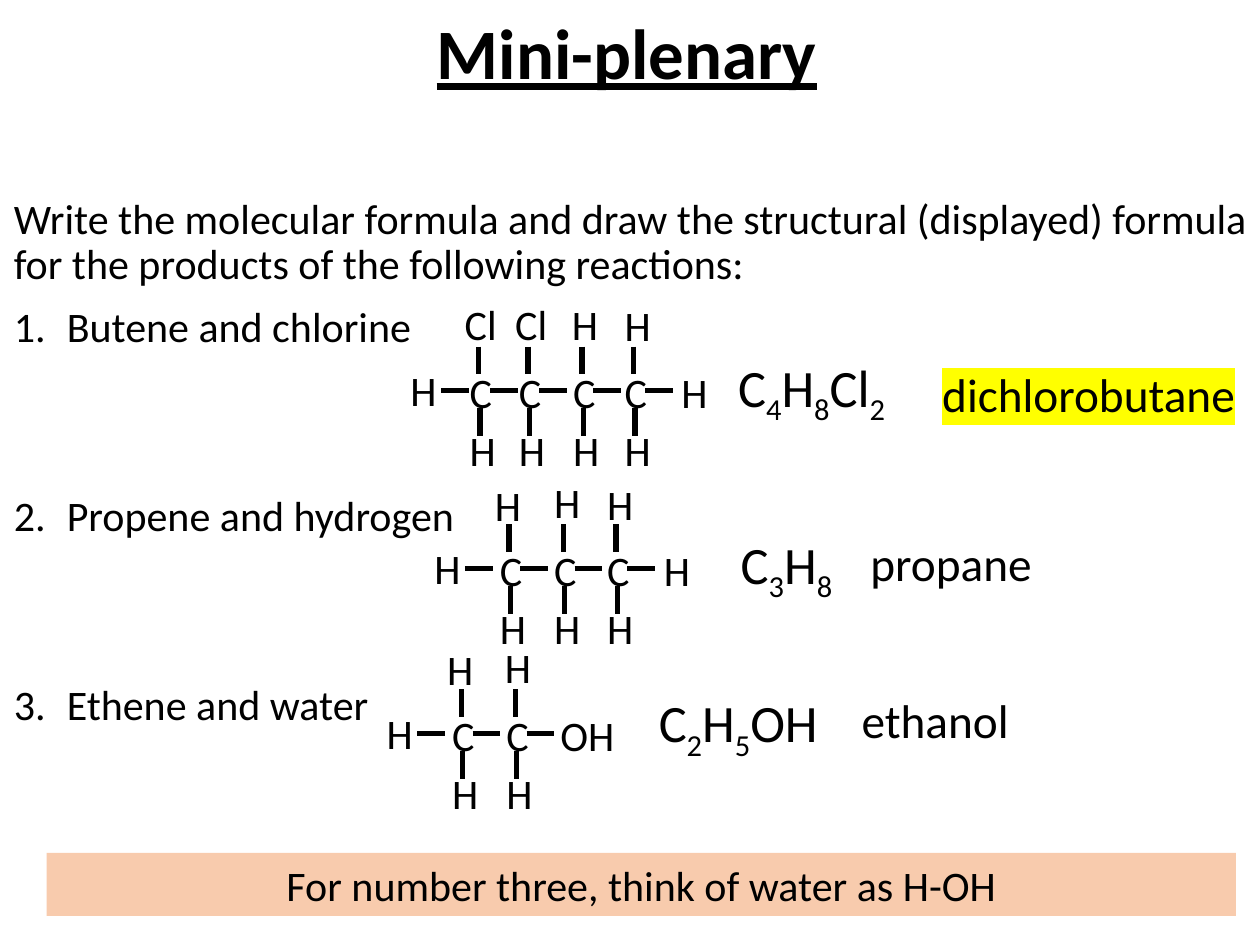
from itertools import groupby

from lxml.etree import SubElement
from pptx import Presentation
from pptx.dml.color import RGBColor
from pptx.enum.shapes import MSO_CONNECTOR as Connector, MSO_SHAPE as Shape
from pptx.enum.text import MSO_ANCHOR as Anchor, MSO_AUTO_SIZE as AutoSize, PP_ALIGN as Align
from pptx.oxml import parse_xml
from pptx.oxml.ns import nsdecls, qn
from pptx.util import Inches, Pt

BLACK = RGBColor(0x00, 0x00, 0x00)
PEACH = RGBColor(0xF8, 0xCB, 0xAD)
YELLOW = RGBColor(0xFF, 0xFF, 0x00)

COLUMNS, ROWS = 100, 75
LABEL_WIDTH, LABEL_HEIGHT = 4.7, 5
BOND = 2.2

# Each chain: row of the carbons, left end (label, column), right end (label, column),
# then one (top label, its column, carbon column, row shift of the top label) per carbon.
CHAINS = [
    (28.6, ("H", 31.6), ("H", 53.1),
     [("Cl", 35.9, 36.3, 0), ("Cl", 39.9, 40.2, 0), ("H", 44.4, 44.5, 0), ("H", 48.6, 48.6, 0.1)]),
    (42.7, ("H", 33.5), ("H", 51.7),
     [("H", 38.3, 38.7, 0.3), ("H", 43, 43, 0), ("H", 47.2, 47.2, 0.2)]),
    (55.8, ("H", 29.7), ("OH", 43.5),
     [("H", 34.5, 34.9, 0.2), ("H", 39.1, 39.2, 0)]),
]
# Molecular formula and product name, each with its column and row.
ANSWERS = [
    (("C4H8Cl2", 57.6, 27.7), ("dichlorobutane", 73.8, 28.5, YELLOW)),
    (("C3H8", 57.8, 41.7), ("propane", 68.1, 41.9, None)),
    (("C2H5OH", 51.3, 54.3), ("ethanol", 67.4, 54.4, None)),
]
TASK = ("Write the molecular formula and draw the structural (displayed) formula "
        "for the products of the following reactions:")
REACTIONS = ["Butene and chlorine", "Propene and hydrogen", "Ethene and water"]


class LessonSlide:
    font_name = "Calibri"
    text_size = 24

    def __init__(self, presentation):
        self.column = presentation.slide_width / COLUMNS
        self.row = presentation.slide_height / ROWS
        self.slide = presentation.slides.add_slide(presentation.slide_layouts[1])

    def place(self, left, top, width, height):
        """Turn grid columns and rows into lengths."""
        return (round(left * self.column), round(top * self.row),
                round(width * self.column), round(height * self.row))

    def move(self, shape, *cells):
        shape.left, shape.top, shape.width, shape.height = self.place(*cells)

    def run(self, paragraph, text, size=text_size, subscript=False, highlight=None):
        run = paragraph.add_run()
        run.text = text
        run.font.size = Pt(size)
        run.font.color.rgb = BLACK
        run.font.name = self.font_name
        properties = run._r.get_or_add_rPr()
        if subscript:
            properties.set("baseline", "-25000")
        if highlight is not None:
            properties.find(qn("a:solidFill")).addnext(parse_xml(
                f'<a:highlight {nsdecls("a")}><a:srgbClr val="{highlight}"/></a:highlight>'))
        return run

    def title(self, text):
        title = self.slide.shapes.title
        self.move(title, 0.1, 1, 99.3, 7)
        frame = title.text_frame
        frame.vertical_anchor = Anchor.MIDDLE
        frame.auto_size = AutoSize.NONE
        paragraph = frame.paragraphs[0]
        paragraph.alignment = Align.CENTER
        paragraph.line_spacing = 0.9
        run = self.run(paragraph, text, 40.5)
        run.font.bold = run.font.underline = True

    def numbered_list(self, intro, items):
        body = self.slide.placeholders[1]
        self.move(body, 0.1, 15.2, 100, 45.7)
        frame = body.text_frame
        frame.auto_size = AutoSize.NONE
        frame.vertical_anchor = Anchor.TOP
        for index, text in enumerate([intro, *items]):
            paragraph = frame.add_paragraph() if index else frame.paragraphs[0]
            paragraph.line_spacing = 0.9
            paragraph.space_before = Pt(10 if index < 2 else 82)
            properties = paragraph._p.get_or_add_pPr()
            indent = Inches(0.42) if index else 0
            properties.set("marL", str(indent))
            properties.set("indent", str(-indent))
            if index:
                SubElement(properties, qn("a:buFont"), typeface="+mj-lt")
                SubElement(properties, qn("a:buAutoNum"), type="arabicPeriod")
            else:
                SubElement(properties, qn("a:buNone"))
            self.run(paragraph, text)

    def text_box(self, shapes, *cells):
        """Add an empty box and return its paragraph."""
        frame = shapes.add_textbox(*self.place(*cells)).text_frame
        frame.word_wrap = True
        frame.auto_size = AutoSize.SHAPE_TO_FIT_TEXT
        return frame.paragraphs[0]

    def atom(self, group, symbol, left, top):
        width = LABEL_WIDTH + 1.9 * (symbol == "OH")
        self.run(self.text_box(group.shapes, left, top, width, LABEL_HEIGHT), symbol)

    def bond(self, group, left, top, across=0, down=0):
        x, y, width, height = self.place(left, top, across, down)
        line = group.shapes.add_connector(Connector.STRAIGHT, x, y, x + width, y + height)
        line.line.color.rgb = BLACK
        line.line.width = Pt(3)
        SubElement(line._element.spPr, qn("a:effectLst"))

    def chain(self, row, left_end, right_end, carbons):
        """Draw a carbon chain with its bonds, the atoms around it and both ends."""
        group = self.slide.shapes.add_group_shape()
        self.atom(group, *left_end, row - 0.15)
        self.bond(group, left_end[1] + 3.4, row + 2.4, across=BOND)
        for symbol, symbol_column, column, shift in carbons:
            self.atom(group, "C", column, row)
            self.atom(group, symbol, symbol_column, row - 5.4 + shift)
            self.atom(group, "H", column, row + 4.6)
            self.bond(group, column + 2.6, row + 2.4, across=BOND)
            self.bond(group, column + 1.7, row - 1.1, down=BOND)
            self.bond(group, column + 1.8, row + 3.8, down=BOND)
        self.atom(group, *right_end, row)

    def formula(self, text, left, top):
        paragraph = self.text_box(self.slide.shapes, left, top, 20.1, 6.1)
        for is_number, characters in groupby(text, str.isdigit):
            self.run(paragraph, "".join(characters), 30, subscript=is_number)

    def product(self, name, left, top, highlight):
        paragraph = self.text_box(self.slide.shapes, left, top, 25.3, 5.6)
        self.run(paragraph, name, 27, highlight=highlight)

    def hint(self, text, *cells):
        shape = self.slide.shapes.add_shape(Shape.RECTANGLE, *self.place(*cells))
        shape.shadow.inherit = False
        shape.fill.solid()
        shape.fill.fore_color.rgb = PEACH
        shape.line.fill.background()
        frame = shape.text_frame
        frame.word_wrap = True
        frame.vertical_anchor = Anchor.TOP
        frame.auto_size = AutoSize.SHAPE_TO_FIT_TEXT
        frame.paragraphs[0].alignment = Align.CENTER
        self.run(frame.paragraphs[0], text)


def main():
    presentation = Presentation()
    presentation.slide_width, presentation.slide_height = Inches(10), Inches(7.5)
    lesson = LessonSlide(presentation)
    lesson.title("Mini-plenary")
    lesson.numbered_list(TASK, REACTIONS)
    for chain, (formula, product) in zip(CHAINS, ANSWERS):
        lesson.chain(*chain)
        lesson.formula(*formula)
        lesson.product(*product)
    lesson.hint("For number three, think of water as H-OH", 3.7, 67.7, 94.4, 5)
    presentation.save("out.pptx")


if __name__ == "__main__":
    main()
